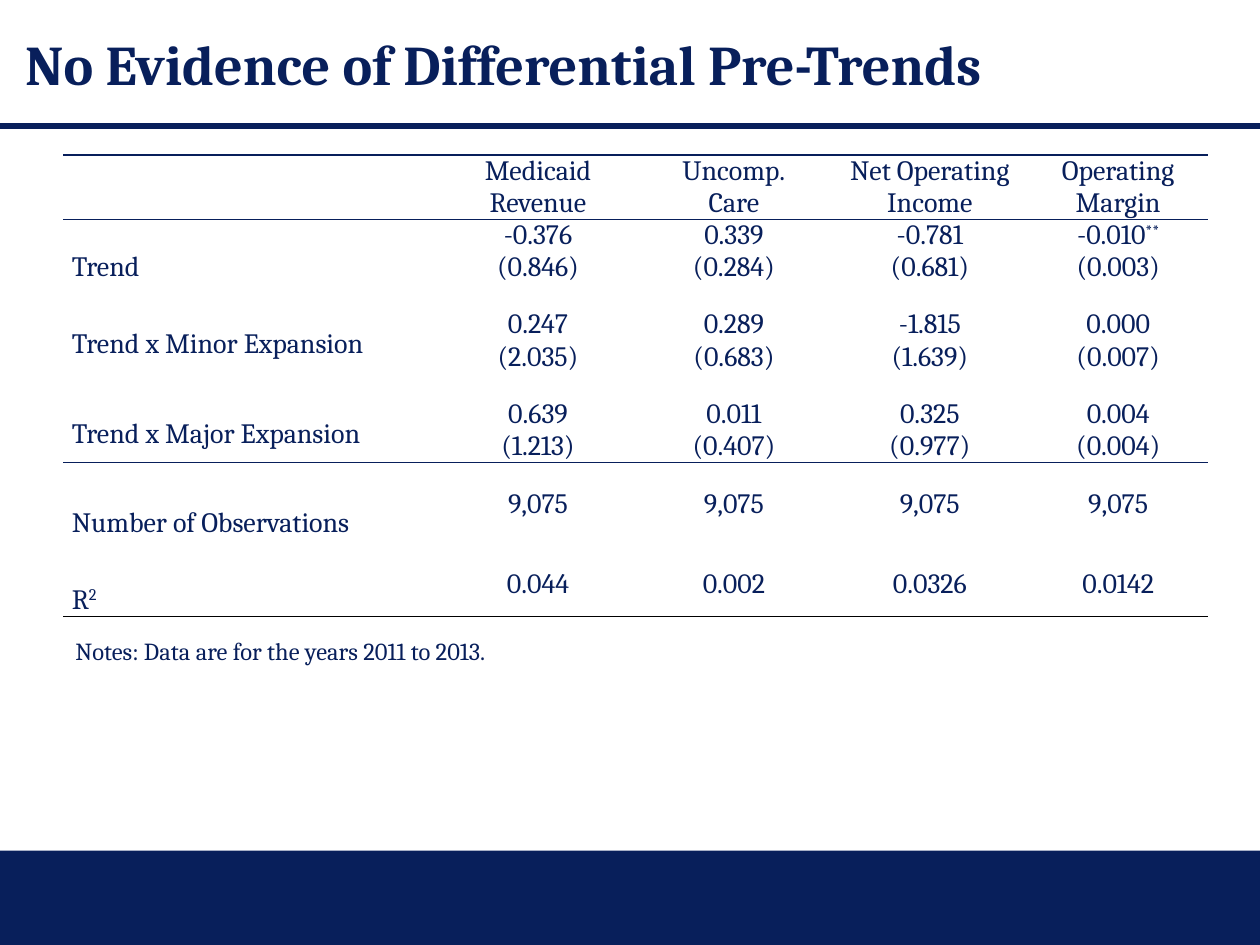
"""Build the pre-trends regression table slide."""
from dataclasses import dataclass
from typing import Optional

from lxml import etree
from pptx import Presentation
from pptx import util as u
from pptx.dml.color import RGBColor
from pptx.enum import shapes, text
from pptx.oxml import ns

HUES = {"ink": "081F5B", "page": "FFFFFF", "black": "000000"}
FACE = "Cambria"
WIDE, HIGH = u.Inches(10), u.Inches(7.5)
COLS = (2.99, 1.56, 1.55, 1.56, 1.43)


@dataclass
class Row:
    label: str
    cells: tuple[str, ...]
    high: float
    rule: Optional[str] = None
    foot: float = 0
    low: bool = True


ROWS = (
    Row("", ("Medicaid Revenue", "Uncomp.\nCare", "Net Operating Income",
             "Operating Margin"), 0.51, "ink"),
    Row("Trend", ("-0.376\n(0.846)", "0.339\n(0.284)", "-0.781\n(0.681)",
                  "-0.010^**\n(0.003)"), 0.51),
    Row("Trend x Minor Expansion", ("0.247\n(2.035)", "0.289\n(0.683)",
                                    "-1.815\n(1.639)", "0.000\n(0.007)"), 0.71),
    Row("Trend x Major Expansion", ("0.639\n(1.213)", "0.011\n(0.407)",
                                    "0.325\n(0.977)", "0.004\n(0.004)"), 0.71, "ink"),
    Row("Number of Observations", ("9,075",) * 4, 0.71, foot=0.25),
    Row("R^2", ("0.044", "0.002", "0.0326", "0.0142"), 0.51, "black", low=False),
)


def hue(name: str) -> RGBColor:
    return RGBColor.from_string(HUES[name])


def style(para, size: float, bold: bool = False) -> None:
    font = para.font
    font.name, font.size, font.bold = FACE, u.Pt(size), bold
    font.color.rgb = hue("ink")


def write(frame, words: str, size: float, align=text.PP_ALIGN.LEFT,
          bold: bool = False) -> None:
    """Write lines as paragraphs, raising whatever follows a caret."""
    for i, line in enumerate(words.split("\n")):
        para = frame.add_paragraph() if i else frame.paragraphs[0]
        para.alignment = align
        base, _, top = line.partition("^")
        para.add_run().text = base
        if top:
            run = para.add_run()
            run.text = top
            run._r.get_or_add_rPr().set("baseline", "30000")
        style(para, size, bold)


def edge(cell, side: str, name: Optional[str]) -> None:
    line = etree.SubElement(cell._tc.get_or_add_tcPr(), ns.qn(f"a:ln{side}"),
                            w=str(u.Pt(1)))
    if name is None:
        etree.SubElement(line, ns.qn("a:noFill"))
    else:
        fill = etree.SubElement(line, ns.qn("a:solidFill"))
        etree.SubElement(fill, ns.qn("a:srgbClr"), val=HUES[name])


def fill_cell(cell, words: str, row: Row, above: Optional[str], head: bool) -> None:
    for side, name in zip("LRTB", (None, None, above, row.rule)):
        edge(cell, side, name)
    cell.fill.solid()
    cell.fill.fore_color.rgb = hue("page")
    cell.margin_left = cell.margin_right = u.Inches(0.07)
    cell.margin_top = 0
    cell.margin_bottom = u.Inches(0 if head else row.foot)
    low = row.low and not head
    cell.vertical_anchor = text.MSO_ANCHOR.BOTTOM if low else text.MSO_ANCHOR.MIDDLE
    if words:
        write(cell.text_frame, words, 16,
              text.PP_ALIGN.LEFT if head else text.PP_ALIGN.CENTER)
        if head:
            cell.text_frame.paragraphs[0].line_spacing = 2.0
    else:
        style(cell.text_frame.paragraphs[0], 16)


def add_grid(slide) -> None:
    grid = slide.shapes.add_table(
        len(ROWS), len(COLS), u.Inches(0.5), u.Inches(1.23),
        u.Inches(sum(COLS)), u.Inches(sum(r.high for r in ROWS))).table
    grid.first_row = grid.horz_banding = False
    for col, wide in zip(grid.columns, COLS):
        col.width = u.Inches(wide)
    above = "ink"
    for r, row in enumerate(ROWS):
        grid.rows[r].height = u.Inches(row.high)
        for c, words in enumerate((row.label, *row.cells)):
            fill_cell(grid.cell(r, c), words, row, above, c == 0)
        above = row.rule


def add_frame(slide) -> None:
    """Draw the footer band and the line under the title."""
    band = slide.shapes.add_shape(shapes.MSO_SHAPE.RECTANGLE, 0, int(HIGH * 0.9),
                                  WIDE, int(HIGH * 0.1))
    band.shadow.inherit = False
    band.fill.solid()
    band.fill.fore_color.rgb = hue("ink")
    band.line.fill.background()
    rule = slide.shapes.add_connector(shapes.MSO_CONNECTOR.STRAIGHT, 0, u.Inches(1),
                                      WIDE, u.Inches(1))
    rule.line.color.rgb, rule.line.width = hue("ink"), u.Pt(3)
    etree.SubElement(rule._element.spPr, ns.qn("a:effectLst"))


def add_title(slide) -> None:
    title = slide.shapes.title
    title.left, title.top = u.Inches(0.1), 0
    title.width, title.height = u.Inches(9.75), u.Inches(1)
    frame = title.text_frame
    frame.auto_size = text.MSO_AUTO_SIZE.NONE
    frame.vertical_anchor = text.MSO_ANCHOR.MIDDLE
    write(frame, "No Evidence of Differential Pre-Trends", 32, bold=True)


def add_note(slide) -> None:
    box = slide.shapes.add_textbox(u.Inches(0.5), u.Inches(5),
                                   u.Inches(9.25), u.Inches(0.34))
    box.text_frame.word_wrap = True
    write(box.text_frame, "Notes: Data are for the years 2011 to 2013.", 14)


def main() -> None:
    deck = Presentation()
    deck.slide_width, deck.slide_height = WIDE, HIGH
    slide = deck.slides.add_slide(deck.slide_layouts[5])
    for draw in (add_frame, add_title, add_grid, add_note):
        draw(slide)
    deck.save("out.pptx")


if __name__ == "__main__":
    main()
